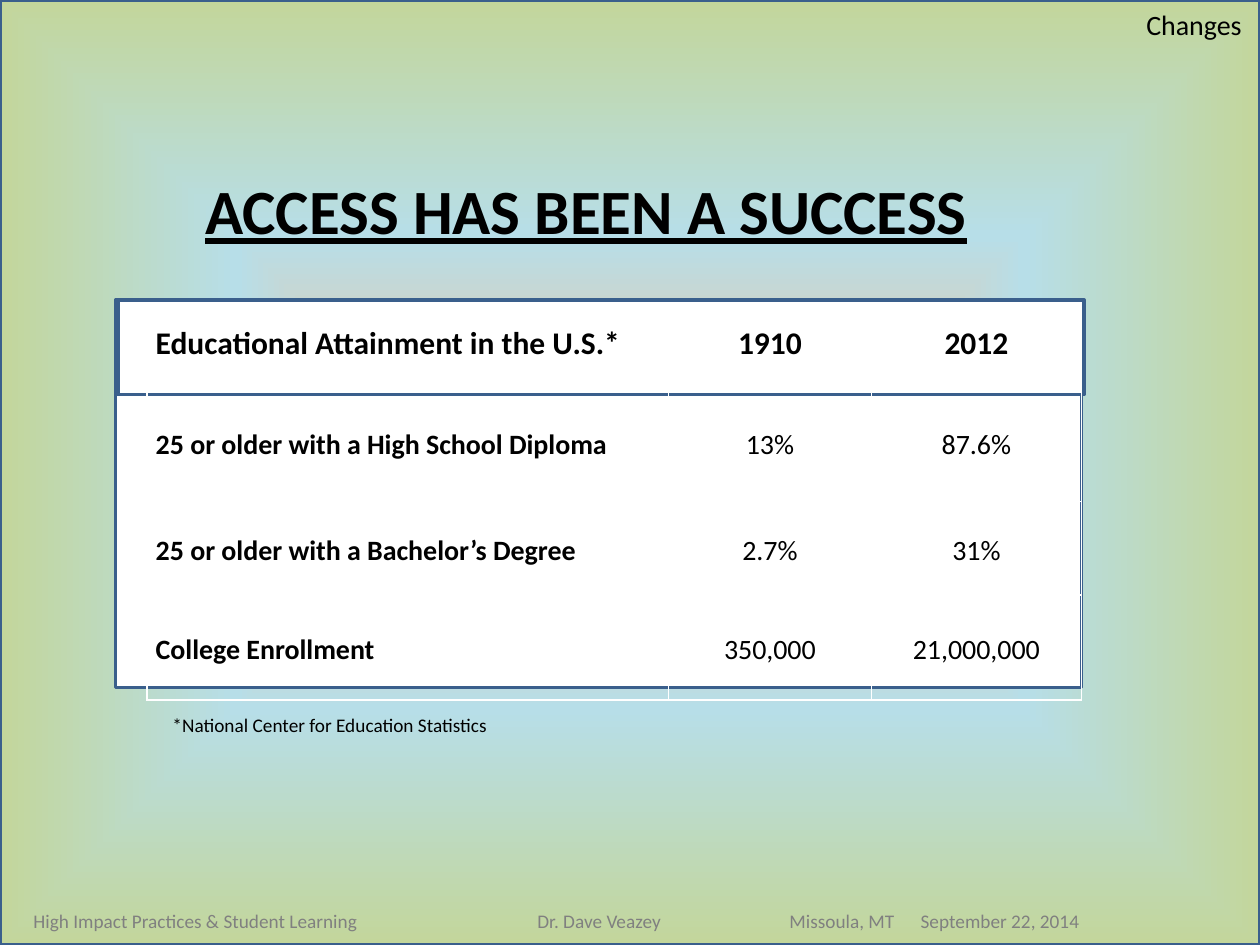
from dataclasses import dataclass

from lxml import etree
from pptx import Presentation
from pptx.dml.color import RGBColor
from pptx.enum.shapes import MSO_SHAPE
from pptx.enum.text import MSO_ANCHOR, PP_ALIGN
from pptx.oxml.ns import qn
from pptx.util import Pt

RECT = MSO_SHAPE.RECTANGLE
TOP, MIDDLE = MSO_ANCHOR.TOP, MSO_ANCHOR.MIDDLE
LEFT, CENTER = PP_ALIGN.LEFT, PP_ALIGN.CENTER


@dataclass(frozen=True)
class Theme:
    font: str = "Calibri"
    ink: str = "000000"
    grey: str = "808080"
    white: str = "FFFFFF"
    line: str = "3A5F8C"
    glow: tuple = ((0, "FAC090"), (50, "B7DEE8"), (100, "C3D69B"))
    title: int = 36
    head: int = 18
    body: int = 16
    small: int = 11


def node(parent, tag, **attrs):
    """Add a child element with the given attributes."""
    child = etree.SubElement(parent, qn(tag))
    for key, value in attrs.items():
        child.set(key, str(value))
    return child


class Deck:
    def __init__(self, theme):
        self.theme = theme
        self.prs = Presentation()
        self.prs.slide_width, self.prs.slide_height = Pt(720), Pt(540)
        self.slide = self.prs.slides.add_slide(self.prs.slide_layouts[5])

    def style(self, para, size, color=None, bold=False, line=False):
        for run in para.runs:
            font = run.font
            font.name, font.size = self.theme.font, Pt(size)
            font.bold, font.underline = bold, line
            font.color.rgb = RGBColor.from_string(color or self.theme.ink)

    def panel(self, x, y, w, h):
        shape = self.slide.shapes.add_shape(RECT, Pt(x), Pt(y), Pt(w), Pt(h))
        shape.shadow.inherit = False
        shape.fill.solid()
        shape.fill.fore_color.rgb = RGBColor.from_string(self.theme.white)
        shape.line.color.rgb = RGBColor.from_string(self.theme.line)
        shape.line.width = Pt(2)
        return shape

    def backdrop(self):
        shape = self.panel(0, 0, 720, 540)
        # Gradient that runs from the centre to the edges
        solid = shape.element.spPr.find(qn("a:solidFill"))
        grad = etree.Element(qn("a:gradFill"), rotWithShape="1")
        stops = node(grad, "a:gsLst")
        for pos, color in self.theme.glow:
            stop = node(stops, "a:gs", pos=pos * 1000)
            node(stop, "a:srgbClr", val=color)
        path = node(grad, "a:path", path="shape")
        node(path, "a:fillToRect", l=50000, t=50000, r=50000, b=50000)
        solid.getparent().replace(solid, grad)

    def label(self, text, x, y, w, h, size, color=None, anchor=TOP, tabs=()):
        box = self.slide.shapes.add_textbox(Pt(x), Pt(y), Pt(w), Pt(h))
        frame = box.text_frame
        frame.word_wrap, frame.vertical_anchor = True, anchor
        frame.text = text
        para = frame.paragraphs[0]
        if tabs:
            stops = node(para._p.get_or_add_pPr(), "a:tabLst")
            for pos in tabs:
                node(stops, "a:tab", pos=Pt(pos), algn="l")
        self.style(para, size, color)

    def title(self, text, x, y, w, h):
        shape = self.slide.shapes.title
        shape.left, shape.top = Pt(x), Pt(y)
        shape.width, shape.height = Pt(w), Pt(h)
        frame = shape.text_frame
        frame.text = text
        frame.word_wrap, frame.vertical_anchor = True, TOP
        para = frame.paragraphs[0]
        para.alignment = LEFT
        self.style(para, self.theme.title, bold=True, line=True)
        # Bring the title in front of the backdrop
        shape.element.getparent().append(shape.element)

    def border(self, cell, widths):
        props = cell._tc.get_or_add_tcPr()
        for side, width in zip("LRTB", widths):
            edge = node(props, f"a:ln{side}", w=Pt(width))
            fill = node(edge, "a:solidFill")
            node(fill, "a:srgbClr", val=self.theme.white)

    def table(self, rows, x, y, widths, heights):
        frame = self.slide.shapes.add_table(
            len(rows), len(widths), Pt(x), Pt(y),
            Pt(sum(widths)), Pt(sum(heights)))
        grid = frame.table
        grid.horz_banding = False
        for col, width in zip(grid.columns, widths):
            col.width = Pt(width)
        for r, values in enumerate(rows):
            grid.rows[r].height = Pt(heights[r])
            head = r == 0
            for c, value in enumerate(values):
                cell = grid.cell(r, c)
                self.border(cell, (1, 1, 3 if r == 1 else 1, 3 if head else 1))
                cell.fill.background()
                cell.margin_left = cell.margin_right = Pt(5)
                cell.margin_top = cell.margin_bottom = Pt(0)
                cell.vertical_anchor = TOP if head else MIDDLE
                cell.text_frame.text = value
                para = cell.text_frame.paragraphs[0]
                para.alignment = CENTER if c else LEFT
                para.line_spacing = 1.15
                size = self.theme.head if head else self.theme.body
                self.style(para, size, bold=head or c == 0)


def main():
    theme = Theme()
    deck = Deck(theme)

    # Backdrop and footer
    deck.backdrop()
    deck.label("High Impact Practices & Student Learning\tDr. Dave Veazey\t"
               "Missoula, MT\tSeptember 22, 2014",
               12, 516, 702, 21, theme.small, theme.grey, tabs=(288, 432, 507))

    # Panels behind the table
    deck.panel(66, 171.5, 552, 221.5)
    deck.panel(67.5, 171.5, 552, 54)

    # Attainment table
    rows = [
        ("Educational Attainment in the U.S.*", "1910", "2012"),
        ("25 or older with a High School Diploma", "13%", "87.6%"),
        ("25 or older with a Bachelor’s Degree", "2.7%", "31%"),
        ("College Enrollment", "350,000", "21,000,000"),
    ]
    deck.table(rows, 84, 182, (298, 116, 120), (37.5, 67, 53.5, 60))

    # Source note, title and section label
    deck.label("*National Center for Education Statistics",
               91.5, 403.5, 288, 21, theme.small, anchor=MIDDLE)
    deck.title("ACCESS HAS BEEN A SUCCESS", 110, 94.5, 510, 51)
    deck.label("Changes", 648, 1, 72, 26.5, theme.body)

    deck.prs.save("out.pptx")


if __name__ == "__main__":
    main()
